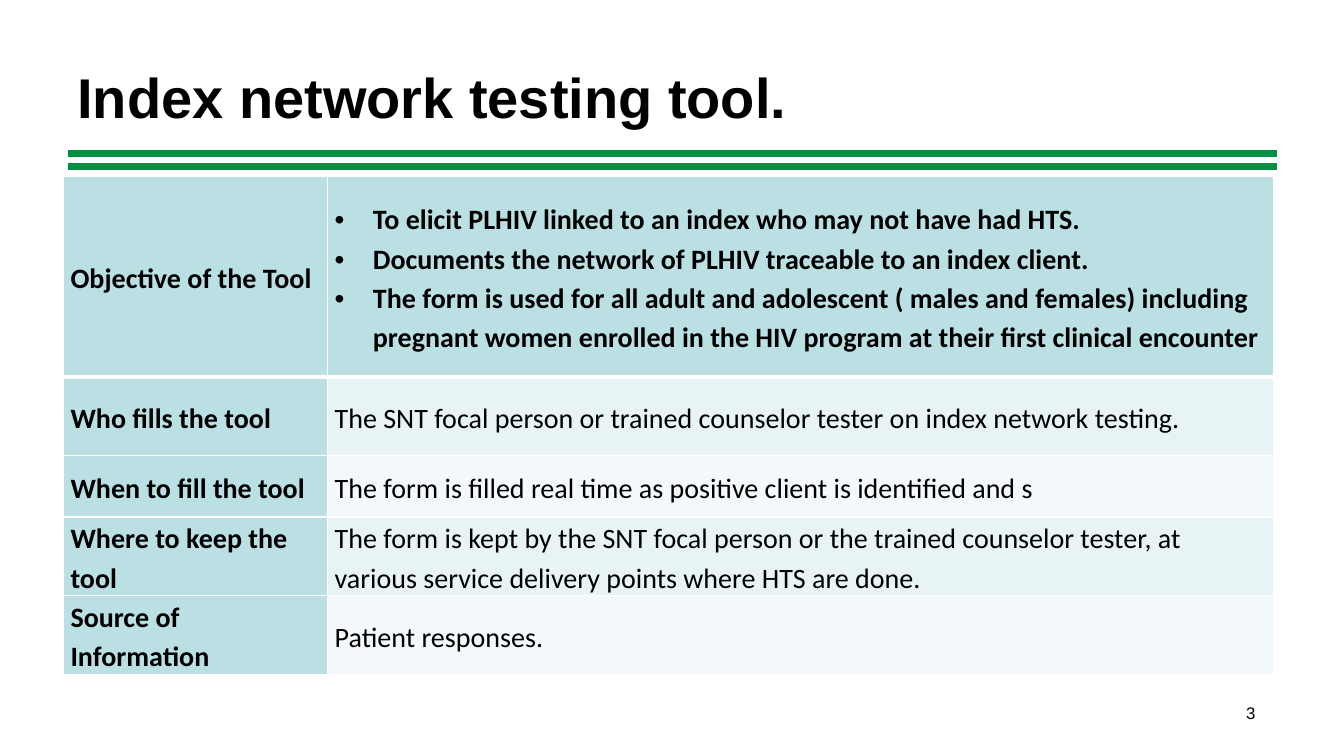
from lxml import etree
from pptx import Presentation
from pptx.dml.color import RGBColor
from pptx.enum.shapes import MSO_CONNECTOR
from pptx.enum.text import MSO_ANCHOR as ANCHOR, PP_ALIGN as ALIGN
from pptx.oxml.ns import qn
from pptx.util import Inches, Pt

COLORS = {
    "text": "000000",
    "rule": "008E40",
    "border": "FFFFFF",
    "label": "BBE0E3",
    "odd": "E7F3F4",
    "even": "F3F9FA",
}
ROWS = [
    ("Objective of the Tool", [
        "To elicit PLHIV linked to an index who may not have had HTS.",
        "Documents the network of PLHIV traceable to an index client.",
        "The form is used for all adult and adolescent ( males and females) including "
        "pregnant women enrolled in the HIV program at their first clinical encounter",
    ]),
    ("Who fills the tool",
     ["The SNT focal person or trained counselor tester on index network testing."]),
    ("When to fill the tool",
     ["The form is filled real time as positive client is identified and s"]),
    ("Where to keep the tool",
     ["The form is kept by the SNT focal person or the trained counselor tester, "
      "at various service delivery points where HTS are done."]),
    ("Source of Information", ["Patient responses."]),
]
COL_WIDTHS = [2.62, 9.38]
ROW_HEIGHTS = [1.99, 0.78, 0.61, 0.78, 0.78]


def rgb(name):
    return RGBColor.from_string(COLORS[name])


def set_font(font, **values):
    for name, value in values.items():
        setattr(font, name, value)
    font.color.rgb = rgb("text")


def add_text(s, box, text, anchor, align, **font):
    tf = s.shapes.add_textbox(*map(Inches, box)).text_frame
    tf.word_wrap = True
    tf.vertical_anchor = anchor
    p = tf.paragraphs[0]
    p.alignment = align
    r = p.add_run()
    r.text = text
    set_font(r.font, name="Arial", **font)


def add_rule(s, y):
    line = s.shapes.add_connector(
        MSO_CONNECTOR.STRAIGHT, Inches(0.67), Inches(y), Inches(12.67), Inches(y))
    line.line.color.rgb = rgb("rule")
    line.line.width = Pt(5)
    etree.SubElement(line._element.spPr, qn("a:effectLst"))


def add_bullet(p):
    pPr = p._p.get_or_add_pPr()
    pPr.set("marL", str(Inches(0.38)))
    pPr.set("indent", str(Inches(-0.38)))
    etree.SubElement(pPr, qn("a:buFont")).set("typeface", "Arial")
    etree.SubElement(pPr, qn("a:buChar")).set("char", "•")


def set_borders(cell, widths):
    tcPr = cell._tc.get_or_add_tcPr()
    for i, (side, width) in enumerate(widths.items()):
        ln = etree.Element(qn(f"a:ln{side}"), w=str(Pt(width)))
        fill = etree.SubElement(ln, qn("a:solidFill"))
        etree.SubElement(fill, qn("a:srgbClr")).set("val", COLORS["border"])
        tcPr.insert(i, ln)


def fill_cell(cell, texts, fill, bold, borders):
    cell.vertical_anchor = ANCHOR.MIDDLE
    cell.margin_left = cell.margin_right = Inches(0.07)
    cell.margin_top = cell.margin_bottom = 0
    cell.fill.solid()
    cell.fill.fore_color.rgb = rgb(fill)
    set_borders(cell, borders)
    tf = cell.text_frame
    for i, text in enumerate(texts):
        p = tf.add_paragraph() if i else tf.paragraphs[0]
        p.line_spacing = 1.15
        if len(texts) > 1:
            add_bullet(p)
        r = p.add_run()
        r.text = text
        set_font(r.font, name="Calibri", size=Pt(20), bold=bold)


def add_tool_table(s):
    table = s.shapes.add_table(
        len(ROWS), len(COL_WIDTHS), Inches(0.63), Inches(1.75),
        Inches(sum(COL_WIDTHS)), Inches(sum(ROW_HEIGHTS))).table
    for col, width in zip(table.columns, COL_WIDTHS):
        col.width = Inches(width)
    for i, (label, details) in enumerate(ROWS):
        table.rows[i].height = Inches(ROW_HEIGHTS[i])
        # The first row is a header with a heavier line below it
        borders = {"L": 1, "R": 1, "T": 3 if i == 1 else 1, "B": 3 if i == 0 else 1}
        band = "label" if i == 0 else "odd" if i % 2 else "even"
        fill_cell(table.cell(i, 0), [label], "label", True, borders)
        fill_cell(table.cell(i, 1), details, band, i == 0, borders)
    # Space after the line on when to fill the tool
    table.cell(2, 1).text_frame.paragraphs[0].space_after = Pt(3.5)


def main():
    prs = Presentation()
    prs.slide_width, prs.slide_height = Inches(13.33), Inches(7.5)
    s = prs.slides.add_slide(prs.slide_layouts[6])

    # Slide number and double rule
    add_text(s, (9.44, 6.92, 3.11, 0.52), "3", ANCHOR.TOP, ALIGN.RIGHT, size=Pt(12))
    for y in (1.65, 1.52):
        add_rule(s, y)

    # Title and table
    add_text(s, (0.67, 0.33, 11.44, 1.25), "Index network testing tool.",
             ANCHOR.MIDDLE, ALIGN.LEFT, size=Pt(40), bold=True)
    add_tool_table(s)

    prs.save("out.pptx")


if __name__ == "__main__":
    main()
